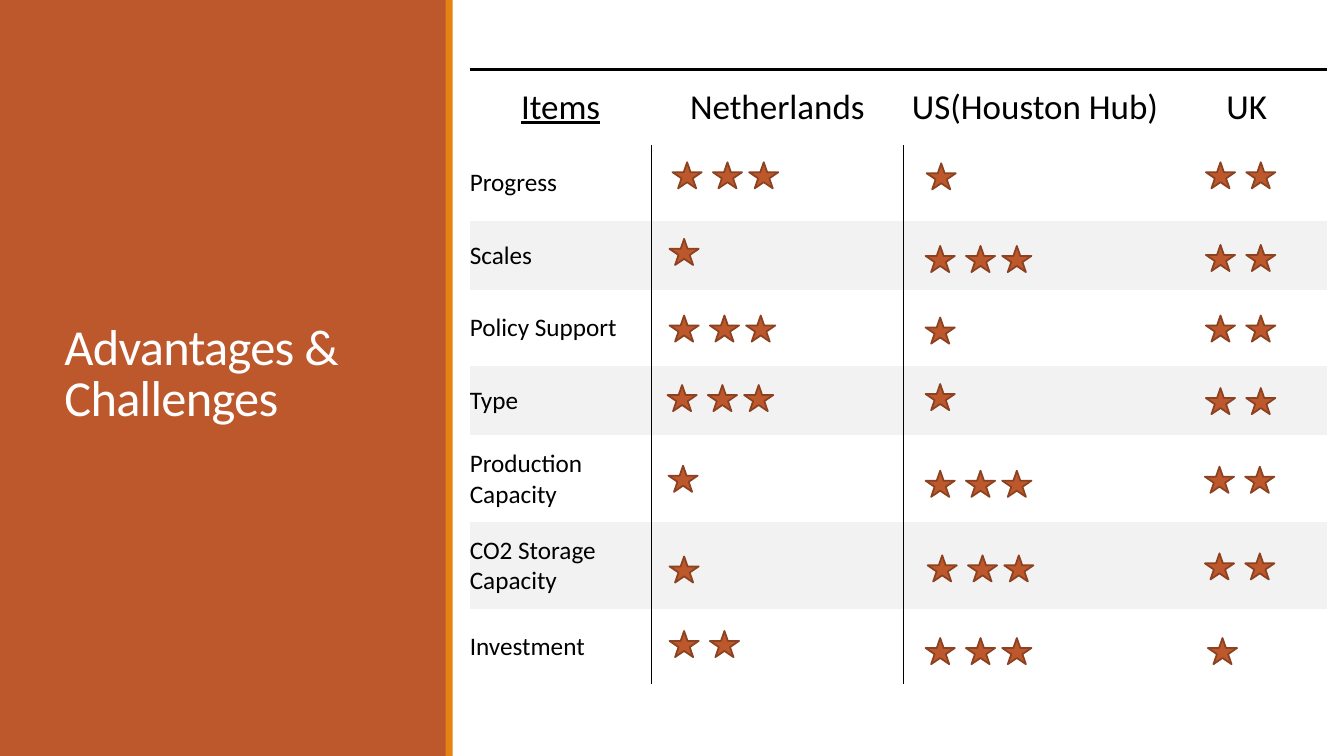
import dataclasses

import lxml.etree
import pptx
import pptx.dml.color
import pptx.enum.shapes
import pptx.enum.text
import pptx.oxml.ns
import pptx.util

Inches = pptx.util.Inches
Pt = pptx.util.Pt
SHAPE = pptx.enum.shapes.MSO_SHAPE
ALIGN = pptx.enum.text.PP_ALIGN
MIDDLE = pptx.enum.text.MSO_ANCHOR.MIDDLE
qn = pptx.oxml.ns.qn


@dataclasses.dataclass(frozen=True)
class Theme:
    font: str = "Calibri"
    rust: str = "BD582C"
    rust_dark: str = "8C4121"
    orange: str = "E48312"
    band: str = "F2F2F2"
    black: str = "000000"
    white: str = "FFFFFF"
    title_size: float = 36
    head_size: float = 25
    body_size: float = 18
    star_line: float = 1.25
    head_rule: float = 2.25
    column_rule: float = 1


NO_STYLE = "{2D5ABB26-0587-4C30-8999-92F81FD0307C}"
COLUMN_WIDTHS = [1.8, 2.5, 2.61, 1.59]
ROW_HEIGHTS = [0.75, 0.75, 0.69, 0.75, 0.69, 0.75, 0.69, 0.75]
HEADERS = ["Items", "Netherlands", "US(Houston Hub)", "UK"]
STAR_SIZE = (0.29, 0.26)
STAR_OFFSETS = [0, 0.4, 0.76]

# Item, then (stars, left, top) for each country
RATINGS = [
    ("Progress", (3, 6.67, 1.61), (1, 9.19, 1.62), (2, 11.96, 1.61)),
    ("Scales", (1, 6.64, 2.37), (3, 9.18, 2.44), (2, 11.96, 2.43)),
    ("Policy Support", (3, 6.64, 3.13), (1, 9.18, 3.15), (2, 11.96, 3.13)),
    ("Type", (3, 6.62, 3.82), (1, 9.18, 3.81), (2, 11.96, 3.85)),
    ("Production Capacity", (1, 6.63, 4.62), (3, 9.18, 4.67), (2, 11.95, 4.63)),
    ("CO2 Storage Capacity", (1, 6.64, 5.52), (3, 9.2, 5.51), (2, 11.95, 5.49)),
    ("Investment", (2, 6.64, 6.26), (3, 9.18, 6.33), (1, 11.98, 6.33)),
]


def rgb(color):
    return pptx.dml.color.RGBColor.from_string(color)


def set_attrs(obj, values):
    for name, value in values.items():
        setattr(obj, name, value)


class SlideBuilder:
    def __init__(self, slide, theme):
        self.slide = slide
        self.theme = theme

    def shape(self, kind, left, top, width, height, fill, line=None, parent=None):
        shapes = (parent or self.slide).shapes
        sp = shapes.add_shape(kind, *map(Inches, (left, top, width, height)))
        sp.shadow.inherit = False
        sp.fill.solid()
        sp.fill.fore_color.rgb = rgb(fill)
        if line:
            sp.line.color.rgb = rgb(line)
            sp.line.width = Pt(self.theme.star_line)
        else:
            sp.line.fill.background()
        return sp

    def run(self, p, text, size, color, underline=None):
        r = p.add_run()
        r.text = text
        set_attrs(r.font, {"name": self.theme.font, "size": Pt(size), "underline": underline})
        r.font.color.rgb = rgb(color)
        return r

    def title(self, text, left, top, width, height):
        sp = self.slide.shapes.add_textbox(*map(Inches, (left, top, width, height)))
        tf = sp.text_frame
        set_attrs(tf, {"word_wrap": True, "vertical_anchor": MIDDLE})
        p = tf.paragraphs[0]
        p.line_spacing = 0.85
        r = self.run(p, text, self.theme.title_size, self.theme.white)
        r.font._element.set("spc", "-50")

    def border(self, cell, side, width):
        """Draw one cell edge; side is L, R, T or B."""
        ln = lxml.etree.Element(qn(f"a:ln{side}"), w=str(Pt(width)))
        fill = lxml.etree.SubElement(ln, qn("a:solidFill"))
        lxml.etree.SubElement(fill, qn("a:srgbClr"), val=self.theme.black)
        cell._tc.get_or_add_tcPr().insert(0, ln)

    def cell(self, cell, text, size, align, banded, underline=None):
        set_attrs(cell, {
            "margin_left": 0, "margin_right": 0,
            "margin_top": Inches(0.13), "margin_bottom": Inches(0.13),
            "vertical_anchor": MIDDLE,
        })
        if banded:
            cell.fill.solid()
            cell.fill.fore_color.rgb = rgb(self.theme.band)
        else:
            cell.fill.background()
        if text:
            p = cell.text_frame.paragraphs[0]
            p.alignment = align
            self.run(p, text, size, self.theme.black, underline)

    def table(self, left, top):
        t = self.theme
        size = sum(COLUMN_WIDTHS), sum(ROW_HEIGHTS)
        frame = self.slide.shapes.add_table(
            len(ROW_HEIGHTS), len(COLUMN_WIDTHS), *map(Inches, (left, top, *size)))
        table = frame.table
        set_attrs(table, {"first_row": False, "horz_banding": False})
        table._tbl.tblPr.find(qn("a:tableStyleId")).text = NO_STYLE
        for column, width in zip(table.columns, COLUMN_WIDTHS):
            column.width = Inches(width)
        for row, height in zip(table.rows, ROW_HEIGHTS):
            row.height = Inches(height)

        for j, text in enumerate(HEADERS):
            cell = table.cell(0, j)
            self.cell(cell, text, t.head_size, ALIGN.CENTER, False, j == 0)
            self.border(cell, "T", t.head_rule)
        for i, (item, *_) in enumerate(RATINGS, 1):
            for j in range(len(HEADERS)):
                text = item if j == 0 else ""
                self.cell(table.cell(i, j), text, t.body_size, ALIGN.LEFT, i % 2 == 0)
            self.border(table.cell(i, 0), "R", t.column_rule)
            self.border(table.cell(i, 1), "L", t.column_rule)

    def stars(self, count, left, top):
        parent = self.slide.shapes.add_group_shape() if count > 1 else None
        for offset in STAR_OFFSETS[:count]:
            self.shape(SHAPE.STAR_5_POINT, left + offset, top, *STAR_SIZE,
                       self.theme.rust, self.theme.rust_dark, parent)


def main():
    prs = pptx.Presentation()
    set_attrs(prs, {"slide_width": Inches(13.33), "slide_height": Inches(7.5)})
    theme = Theme()
    s = SlideBuilder(prs.slides.add_slide(prs.slide_layouts[6]), theme)

    s.shape(SHAPE.RECTANGLE, 0, 0, 4.43, 7.5, theme.rust)
    s.title("Advantages & Challenges", 0.54, 0.57, 3.37, 6.31)
    s.shape(SHAPE.RECTANGLE, 4.42, 0, 0.07, 7.5, theme.orange)
    s.table(4.66, 0.69)
    for _, *ratings in RATINGS:
        for rating in ratings:
            s.stars(*rating)

    prs.save("out.pptx")


if __name__ == "__main__":
    main()
